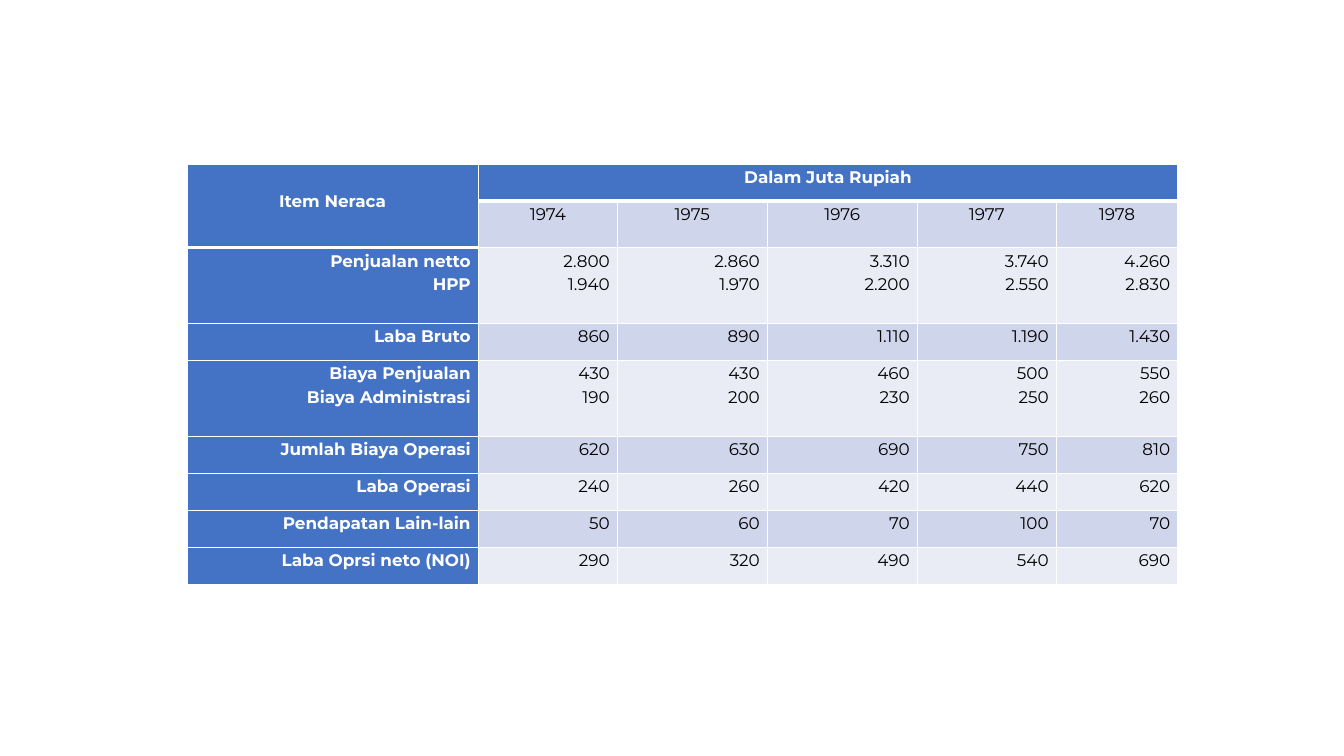
from lxml.etree import SubElement
from pptx import Presentation
from pptx.dml.color import RGBColor
from pptx.enum.text import MSO_ANCHOR as Anchor, PP_ALIGN as Align
from pptx.oxml.ns import qn
from pptx.util import Pt

COLORS = {"header": "4472C4", "band": "CFD5EA", "light": "E9EBF5",
          "white": "FFFFFF", "ink": "000000"}
COLUMN_WIDTHS = [208.2, 99.3, 107.1, 107.1, 99.3, 86.8]
ROW_HEIGHTS = [26.2, 33.2, 54.2, 26.4, 54.2] + [26.4] * 4
BALANCE = [
    ["Item Neraca", "Dalam Juta Rupiah", "", "", "", ""],
    ["", "1974", "1975", "1976", "1977", "1978"],
    ["Penjualan netto\nHPP", "2.800\n1.940", "2.860\n1.970", "3.310\n2.200",
     "3.740\n2.550", "4.260\n2.830"],
    ["Laba Bruto", "860", "890", "1.110", "1.190", "1.430"],
    ["Biaya Penjualan\nBiaya Administrasi", "430\n190", "430\n200", "460\n230",
     "500\n250", "550\n260"],
    ["Jumlah Biaya Operasi", "620", "630", "690", "750", "810"],
    ["Laba Operasi", "240", "260", "420", "440", "620"],
    ["Pendapatan Lain-lain", "50", "60", "70", "100", "70"],
    ["Laba Oprsi neto (NOI)", "290", "320", "490", "540", "690"],
]


class BalanceSlide:
    """Holds the table style and the slide being filled."""

    font_name, font_size, line_spacing = "Montserrat", 12, 1.15

    def __init__(self, deck):
        self.slide = deck.slides.add_slide(deck.slide_layouts[6])

    def table(self, left, top, widths, heights, rows):
        table = self.slide.shapes.add_table(
            len(rows), len(widths), Pt(left), Pt(top),
            Pt(sum(widths)), Pt(sum(heights))).table
        for column, width in zip(table.columns, widths):
            column.width = Pt(width)
        for row, height in zip(table.rows, heights):
            row.height = Pt(height)
        for r, texts in enumerate(rows):
            for c, text in enumerate(texts):
                self.cell(table.cell(r, c), r, c, text)
        table.cell(0, 0).merge(table.cell(1, 0))
        table.cell(0, 1).merge(table.cell(0, len(widths) - 1))
        return table

    def cell(self, cell, row, column, text):
        heading = row == 0 or column == 0
        fill = "header" if heading else "band" if row % 2 else "light"
        cell.fill.solid()
        cell.fill.fore_color.rgb = RGBColor.from_string(COLORS[fill])
        cell.margin_left = cell.margin_right = Pt(5.4)
        cell.margin_top = cell.margin_bottom = 0
        cell.text = text
        for paragraph in cell.text_frame.paragraphs:
            paragraph.alignment = Align.CENTER if row < 2 else Align.RIGHT
            paragraph.line_spacing = self.line_spacing
            font = paragraph.font
            font.name, font.size = self.font_name, Pt(self.font_size)
            font.bold = heading
            font.color.rgb = RGBColor.from_string(COLORS["white" if heading else "ink"])
        header_end = 1 if column == 0 else 0
        self.borders(cell, 3 if row == header_end + 1 else 1,
                     3 if row <= header_end else 1)

    def borders(self, cell, top, bottom):
        properties = cell._tc.get_or_add_tcPr()
        edges = {"a:lnL": 1, "a:lnR": 1, "a:lnT": top, "a:lnB": bottom}
        for position, (tag, width) in enumerate(edges.items()):
            edge = SubElement(properties, qn(tag), w=str(Pt(width)))
            SubElement(SubElement(edge, qn("a:solidFill")), qn("a:srgbClr"),
                       val=COLORS["white"])
            properties.insert(position, edge)


def main():
    deck = Presentation()
    deck.slide_width, deck.slide_height = Pt(960), Pt(540)
    balance = BalanceSlide(deck).table(133.5, 117.5, COLUMN_WIDTHS, ROW_HEIGHTS, BALANCE)
    item_heading = balance.cell(0, 0)
    item_heading.vertical_anchor = Anchor.MIDDLE
    item_heading.margin_bottom = Pt(9)
    deck.save("out.pptx")


if __name__ == "__main__":
    main()
